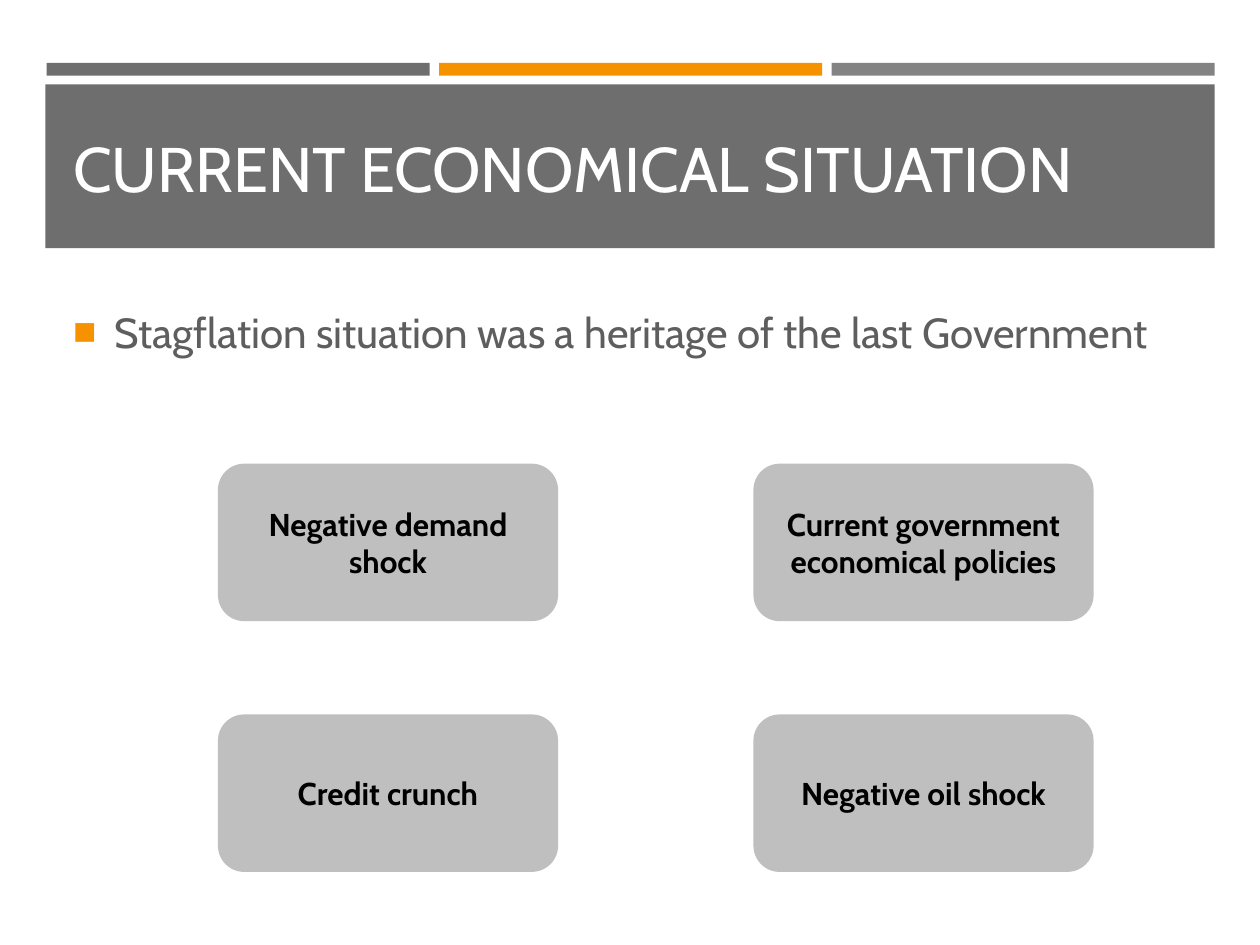
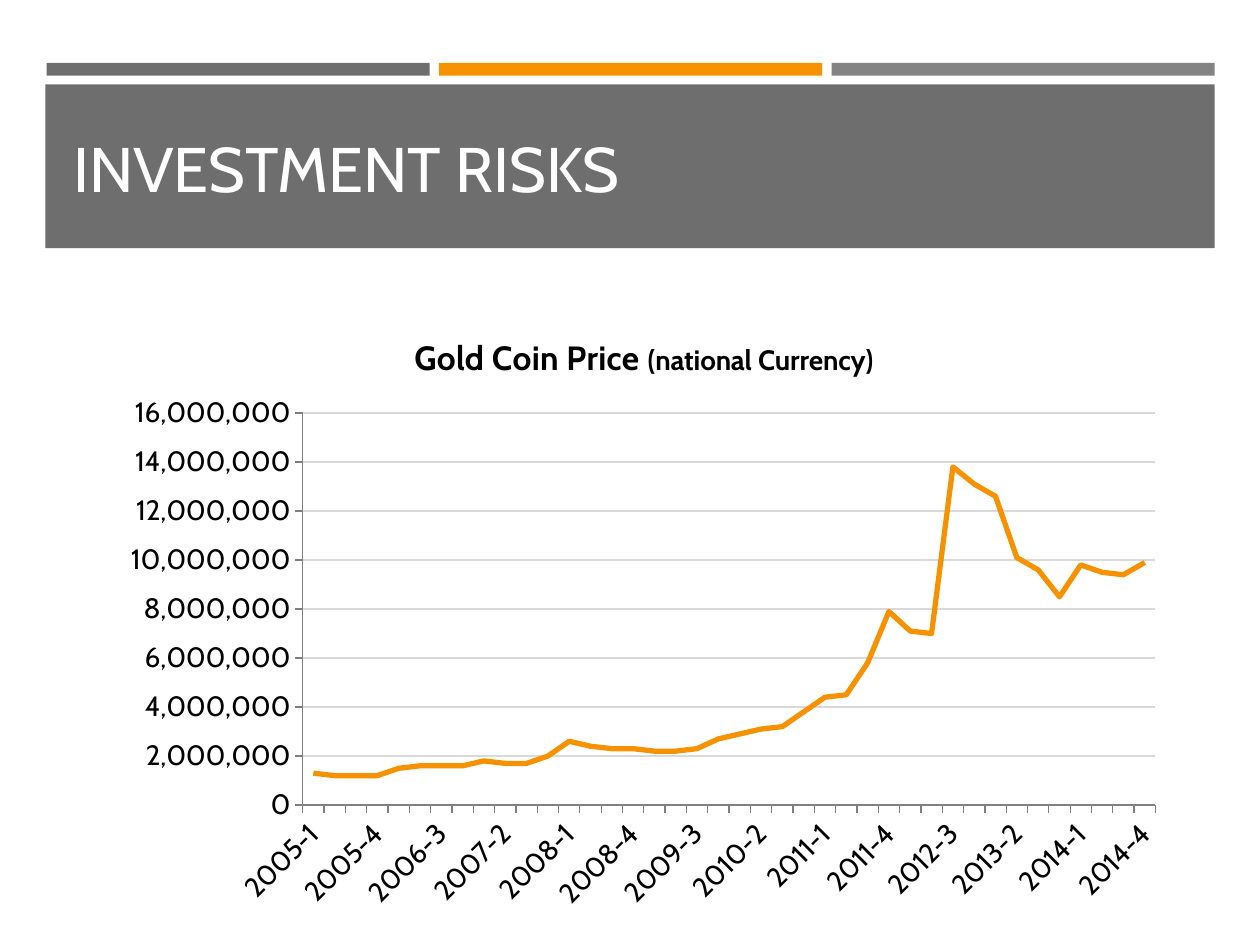
"""Build two slides on the economic situation and investment risks."""
from dataclasses import dataclass

import pptx
import pptx.chart.data
import pptx.dml.color
import pptx.enum.chart
import pptx.enum.shapes
import pptx.enum.text
import pptx.oxml
import pptx.oxml.ns
import pptx.util
from pptx.util import Inches, Pt

FONT = "Cabin"
COLORS = {
    "band": "6E6E6E",
    "accent": "F69200",
    "light_band": "838383",
    "card": "BFBFBF",
    "body": "5E5E5E",
    "grid": "D9D9D9",
    "axis": "7F7F7F",
    "black": "000000",
    "white": "FFFFFF",
}


@dataclass(frozen=True)
class Box:
    left: float
    top: float
    width: float
    height: float

    def inches(self) -> tuple:
        return tuple(Inches(v) for v in (self.left, self.top, self.width, self.height))


@dataclass(frozen=True)
class Band:
    box: Box
    color: str


@dataclass(frozen=True)
class Card:
    text: str
    column: int
    row: int


STRIPE_COLORS = ("band", "accent", "light_band")
BANDS = [
    Band(Box(0.37 + 3.115 * i, 0.5, 3.04, 0.1), color)
    for i, color in enumerate(STRIPE_COLORS)
] + [Band(Box(0.36, 0.67, 9.28, 1.3), "band")]
TITLE_BOX = Box(0.48, 0.77, 9.05, 1.11)
BODY_BOX = Box(0.48, 2.38, 9.05, 4.02)
CHART_BOX = Box(0.88, 2.48, 8.46, 4.84)
PLOT_SHARES = {"x": 0.18, "y": 0.165, "w": 0.8, "h": 0.643}

CARDS = [
    Card("Negative demand shock", 0, 0),
    Card("Current government economical policies", 1, 0),
    Card("Credit crunch", 0, 1),
    Card("Negative oil shock", 1, 1),
]

QUARTERS = [f"{year}-{quarter}" for year in range(2005, 2015) for quarter in range(1, 5)]
PRICES_IN_100K = [
    13, 12, 12, 12, 15, 16, 16, 16, 18, 17, 17, 20, 26, 24, 23, 23, 22, 22, 23, 27,
    29, 31, 32, 38, 44, 45, 58, 79, 71, 70, 138, 131, 126, 101, 96, 85, 98, 95, 94, 99,
]


def rgb(color: str) -> pptx.dml.color.RGBColor:
    return pptx.dml.color.RGBColor.from_string(COLORS[color])


def set_font(font, size: float, color: str, bold: bool = False) -> None:
    font.name = FONT
    font.size = Pt(size)
    font.bold = bold
    font.color.rgb = rgb(color)


def add_filled_shape(slide, preset, box: Box, color: str):
    shape = slide.shapes.add_shape(preset, *box.inches())
    shape.shadow.inherit = False
    shape.fill.solid()
    shape.fill.fore_color.rgb = rgb(color)
    shape.line.fill.background()
    return shape


def put_bands_on_master(slide, master) -> None:
    for number, band in enumerate(BANDS):
        strip = add_filled_shape(
            slide, pptx.enum.shapes.MSO_SHAPE.RECTANGLE, band.box, band.color
        )
        strip.element.nvSpPr.cNvPr.set("id", str(101 + number))
        master.shapes.element.insert(2 + number, strip.element)


def place(placeholder, box: Box) -> None:
    placeholder.left, placeholder.top, placeholder.width, placeholder.height = box.inches()


def add_titled_slide(deck, layout: int, heading: str):
    slide = deck.slides.add_slide(deck.slide_layouts[layout])
    title = slide.shapes.title
    place(title, TITLE_BOX)
    title.text_frame.text = heading
    title.text_frame.vertical_anchor = pptx.enum.text.MSO_ANCHOR.MIDDLE
    line = title.text_frame.paragraphs[0]
    line.alignment = pptx.enum.text.PP_ALIGN.LEFT
    set_font(line.font, 36, "white")
    return slide


def add_square_bullet(paragraph) -> None:
    properties = paragraph._p.get_or_add_pPr()
    properties.set("marL", str(Inches(0.33)))
    properties.set("indent", str(-Inches(0.33)))
    namespace = pptx.oxml.ns.nsdecls("a")
    for xml in (
        f'<a:buClr {namespace}><a:srgbClr val="{COLORS["accent"]}"/></a:buClr>',
        f'<a:buSzPct {namespace} val="92000"/>',
        f'<a:buChar {namespace} char="■"/>',
    ):
        properties.append(pptx.oxml.parse_xml(xml))


def fill_body(body, text: str) -> None:
    place(body, BODY_BOX)
    body.text_frame.text = text
    statement = body.text_frame.paragraphs[0]
    add_square_bullet(statement)
    statement.space_before = Pt(0)
    statement.space_after = Pt(6)
    set_font(statement.font, 24, "body")


def add_card(slide, card: Card) -> None:
    box = Box(1.73 + 4.25 * card.column, 3.68 + 1.99 * card.row, 2.7, 1.25)
    shape = add_filled_shape(
        slide, pptx.enum.shapes.MSO_SHAPE.ROUNDED_RECTANGLE, box, "card"
    )
    frame = shape.text_frame
    frame.word_wrap = True
    frame.vertical_anchor = pptx.enum.text.MSO_ANCHOR.MIDDLE
    frame.text = card.text
    frame.paragraphs[0].alignment = pptx.enum.text.PP_ALIGN.CENTER
    set_font(frame.paragraphs[0].font, 18, "black", bold=True)


def set_outline(line, color: str, width: float) -> None:
    line.color.rgb = rgb(color)
    line.width = Pt(width)


def fix_plot_area(chart) -> None:
    plot_area = chart.element.xpath("c:chart/c:plotArea")[0]
    for layout in plot_area.xpath("c:layout"):
        plot_area.remove(layout)
    modes = '<c:xMode val="edge"/><c:yMode val="edge"/>'
    shares = "".join(f'<c:{key} val="{share}"/>' for key, share in PLOT_SHARES.items())
    plot_area.insert(0, pptx.oxml.parse_xml(
        f'<c:layout {pptx.oxml.ns.nsdecls("c")}><c:manualLayout>'
        f'<c:layoutTarget val="inner"/>{modes}{shares}</c:manualLayout></c:layout>'
    ))


def slant_quarter_labels(chart) -> None:
    axis = chart.element.xpath(".//c:catAx")[0]
    axis.xpath("c:txPr/a:bodyPr")[0].set("rot", "-2700000")
    axis.xpath("c:noMultiLvlLbl")[0].addprevious(pptx.oxml.parse_xml(
        f'<c:tickLblSkip {pptx.oxml.ns.nsdecls("c")} val="3"/>'
    ))


def add_price_chart(slide) -> None:
    prices = pptx.chart.data.CategoryChartData(number_format="#,##0")
    prices.categories = QUARTERS
    prices.add_series("Series 1", [price * 100_000 for price in PRICES_IN_100K])
    chart = slide.shapes.add_chart(
        pptx.enum.chart.XL_CHART_TYPE.LINE, *CHART_BOX.inches(), prices
    ).chart
    set_font(chart.font, 16, "black")
    chart.has_legend = False
    chart.has_title = True
    heading = chart.chart_title.text_frame.paragraphs[0]
    for text, size in (("Gold Coin Price ", 19.2), ("(national Currency)", 16)):
        run = heading.add_run()
        run.text = text
        set_font(run.font, size, "black", bold=True)
    chart.chart_title.include_in_layout = False

    for axis in (chart.category_axis, chart.value_axis):
        axis.major_tick_mark = pptx.enum.chart.XL_TICK_MARK.OUTSIDE
        axis.minor_tick_mark = pptx.enum.chart.XL_TICK_MARK.NONE
        set_font(axis.tick_labels.font, 16, "black")
        set_outline(axis.format.line, "axis", 0.75)
    scale = chart.value_axis
    scale.minimum_scale, scale.maximum_scale, scale.major_unit = 0, 16_000_000, 2_000_000
    scale.tick_labels.number_format = "#,##0"
    scale.tick_labels.number_format_is_linked = False
    scale.has_major_gridlines = True
    set_outline(scale.major_gridlines.format.line, "grid", 0.75)

    chart.plots[0].vary_by_categories = False
    gold = chart.plots[0].series[0]
    gold.smooth = False
    set_outline(gold.format.line, "accent", 3)
    fix_plot_area(chart)
    slant_quarter_labels(chart)


def main() -> None:
    deck = pptx.Presentation()
    deck.slide_width, deck.slide_height = Inches(10), Inches(7.5)

    situation = add_titled_slide(deck, 1, "CURRENT ECONOMICAL SITUATION")
    put_bands_on_master(situation, deck.slide_master)
    fill_body(
        situation.placeholders[1],
        "Stagflation situation was a heritage of the last Government",
    )
    for card in CARDS:
        add_card(situation, card)

    risks = add_titled_slide(deck, 5, "INVESTMENT RISKS")
    add_price_chart(risks)
    deck.save("out.pptx")


if __name__ == "__main__":
    main()
